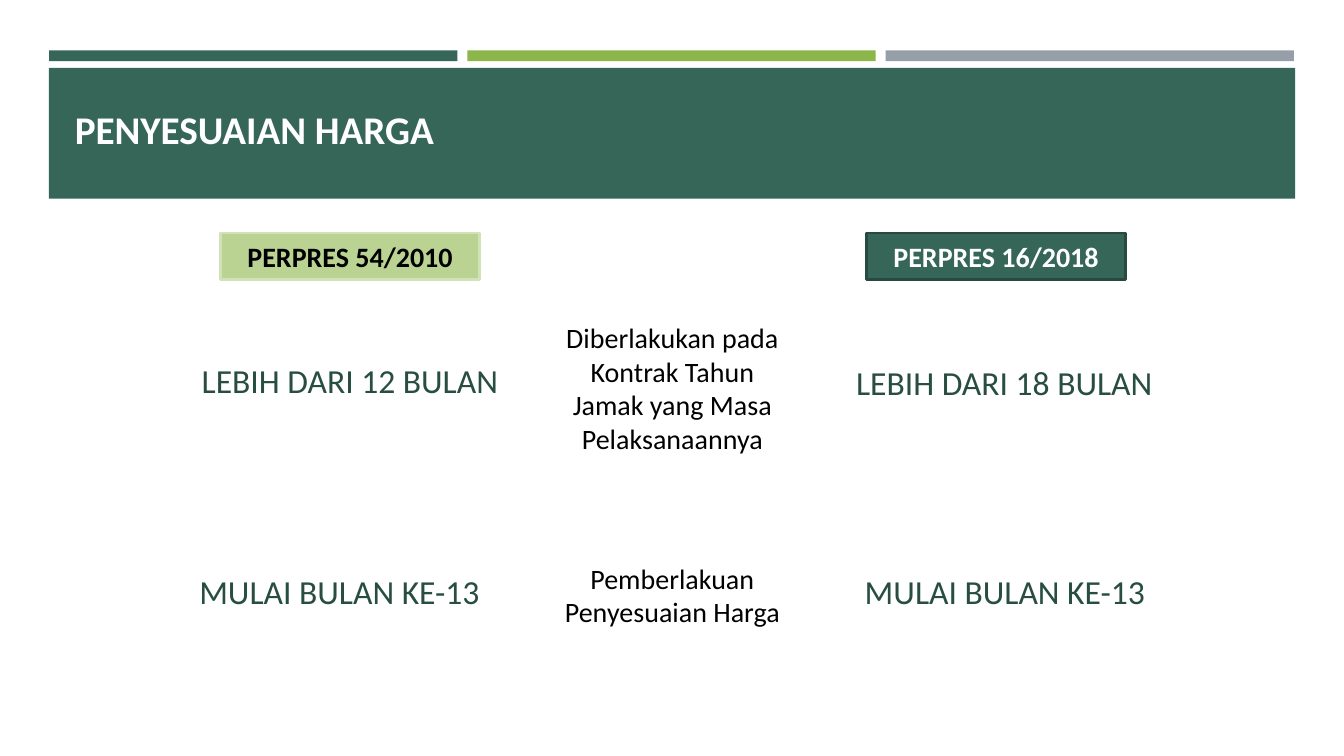
from dataclasses import dataclass

from pptx import Presentation
from pptx.dml.color import RGBColor
from pptx.enum.shapes import MSO_SHAPE
from pptx.enum.text import MSO_ANCHOR, MSO_AUTO_SIZE, PP_ALIGN
from pptx.shapes.autoshape import Shape
from pptx.slide import Slide
from pptx.util import Cm, Pt

RECTANGLE = MSO_SHAPE.RECTANGLE
MIDDLE, BOTTOM, TOP = MSO_ANCHOR.MIDDLE, MSO_ANCHOR.BOTTOM, MSO_ANCHOR.TOP
LEFT, CENTER = PP_ALIGN.LEFT, PP_ALIGN.CENTER
NO_AUTOFIT = MSO_AUTO_SIZE.NONE
FIT_SHAPE = MSO_AUTO_SIZE.SHAPE_TO_FIT_TEXT


@dataclass(frozen=True)
class Theme:
    font: str = "Calibri"
    green: str = "366658"
    dark_green: str = "284B41"
    claim_green: str = "284D42"
    lime: str = "8CB64A"
    light_lime: str = "BAD392"
    pale_lime: str = "D1E2B7"
    gray: str = "969FA7"
    black: str = "000000"
    white: str = "FFFFFF"
    title_size: int = 28
    claim_size: int = 24
    body_size: int = 20


THEME = Theme()


@dataclass(frozen=True)
class Area:
    left: float
    top: float
    width: float
    height: float

    def lengths(self) -> tuple[Cm, Cm, Cm, Cm]:
        return Cm(self.left), Cm(self.top), Cm(self.width), Cm(self.height)


@dataclass(frozen=True)
class Badge:
    text: str
    left: float
    fill: str
    line: str
    color: str


@dataclass(frozen=True)
class Label:
    text: str
    area: Area
    size: int
    color: str
    wrap: bool


def write(box: Shape, text: str, size: int, color: str, bold: bool = False,
          align: PP_ALIGN = CENTER, anchor: MSO_ANCHOR = TOP) -> None:
    frame = box.text_frame
    frame.text = text
    frame.vertical_anchor = anchor
    para = frame.paragraphs[0]
    para.alignment = align
    font = para.runs[0].font
    font.name = THEME.font
    font.size = Pt(size)
    font.bold = bold
    font.color.rgb = RGBColor.from_string(color)


def add_rectangle(page: Slide, area: Area, fill: str, line: str = "") -> Shape:
    box = page.shapes.add_shape(RECTANGLE, *area.lengths())
    box.shadow.inherit = False
    box.fill.solid()
    box.fill.fore_color.rgb = RGBColor.from_string(fill)
    if line:
        box.line.color.rgb = RGBColor.from_string(line)
        box.line.width = Pt(1.75)
    else:
        box.line.fill.background()
    return box


def add_badge(page: Slide, badge: Badge) -> None:
    area = Area(badge.left, 5.87, 6.53, 1.17)
    box = add_rectangle(page, area, badge.fill, badge.line)
    write(box, badge.text, THEME.body_size, badge.color, bold=True, anchor=MIDDLE)


def add_label(page: Slide, label: Label) -> None:
    box = page.shapes.add_textbox(*label.area.lengths())
    box.text_frame.word_wrap = label.wrap
    box.text_frame.auto_size = FIT_SHAPE
    write(box, label.text, label.size, label.color)


def add_title(page: Slide, text: str) -> None:
    title = page.shapes.title
    title.left, title.top, title.width, title.height = Area(1.63, 1.96, 30.63, 2.01).lengths()
    title.text_frame.auto_size = NO_AUTOFIT
    write(title, text, THEME.title_size, THEME.white, bold=True, align=LEFT, anchor=BOTTOM)
    # Bring the title in front of the banner
    page.shapes._spTree.append(title._element)


def topic(text: str, top: float, height: float) -> Label:
    return Label(text, Area(13.92, top, 6.05, height), THEME.body_size, THEME.black, True)


def claim(text: str, left: float, top: float, width: float) -> Label:
    return Label(text, Area(left, top, width, 1.27), THEME.claim_size, THEME.claim_green, False)


BADGES = [
    Badge("PERPRES 54/2010", 5.56, THEME.light_lime, THEME.pale_lime, THEME.black),
    Badge("PERPRES 16/2018", 21.84, THEME.green, THEME.dark_green, THEME.white),
]
LABELS = [
    topic("Diberlakukan pada Kontrak Tahun Jamak yang Masa Pelaksanaannya", 7.95, 3.68),
    claim("LEBIH DARI 12 BULAN", 4.39, 8.94, 8.86),
    claim("LEBIH DARI 18 BULAN", 20.88, 8.99, 8.86),
    topic("Pemberlakuan Penyesuaian Harga", 14.02, 1.96),
    claim("MULAI BULAN KE-13", 4.39, 14.27, 8.33),
    claim("MULAI BULAN KE-13", 21.16, 14.27, 8.33),
]


def main() -> None:
    deck = Presentation()
    deck.slide_width, deck.slide_height = Cm(33.87), Cm(19.05)
    page = deck.slides.add_slide(deck.slide_layouts.get_by_name("Title Only"))

    # Header: three strips above the banner
    for column, color in enumerate((THEME.green, THEME.lime, THEME.gray)):
        add_rectangle(page, Area(1.24 + column * 10.54, 1.27, 10.29, 0.27), color)
    add_rectangle(page, Area(1.23, 1.71, 31.41, 3.3), THEME.green)
    add_title(page, "PENYESUAIAN HARGA")

    # Comparison of the two regulations
    for badge in BADGES:
        add_badge(page, badge)
    for label in LABELS:
        add_label(page, label)

    deck.save("out.pptx")


if __name__ == "__main__":
    main()
